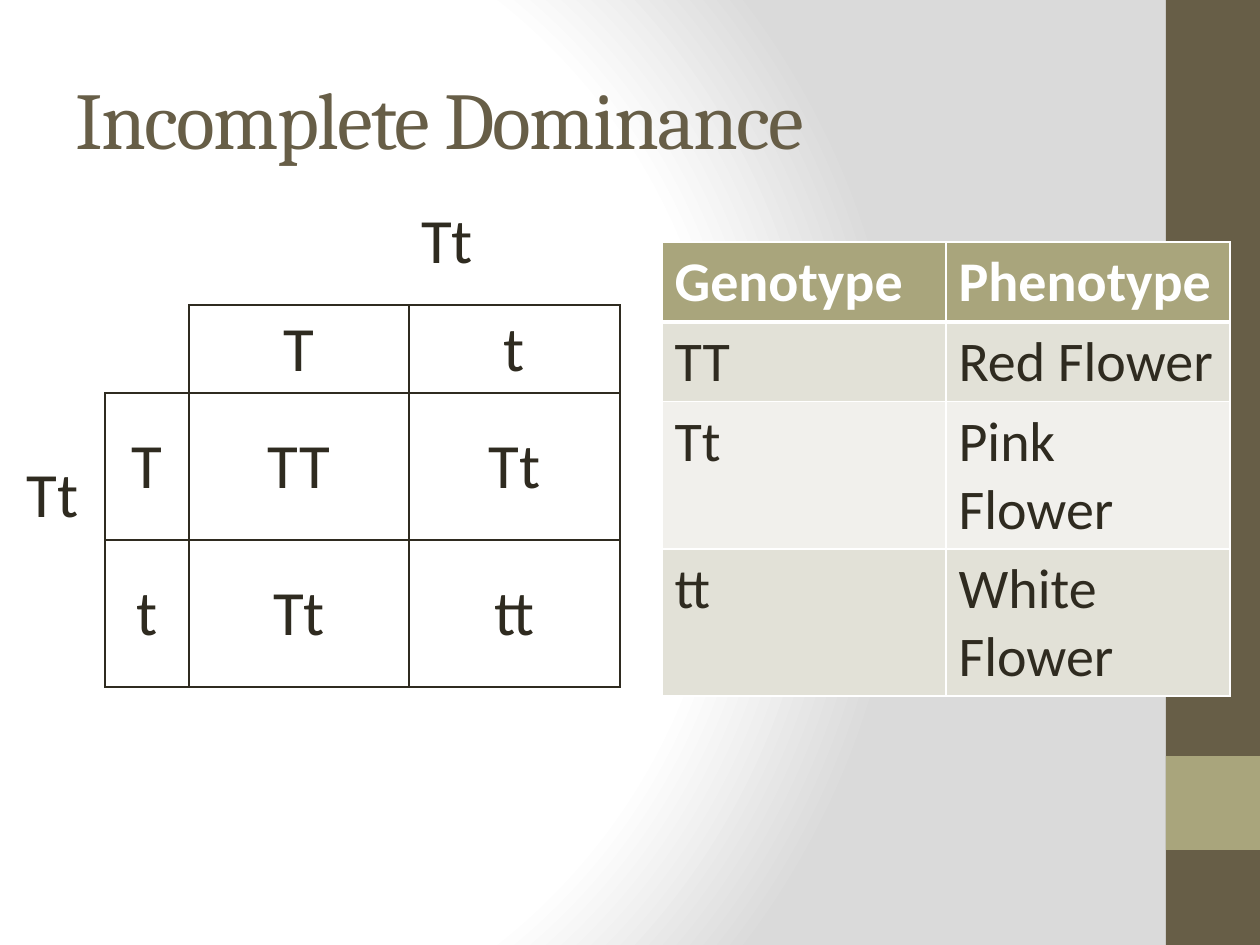
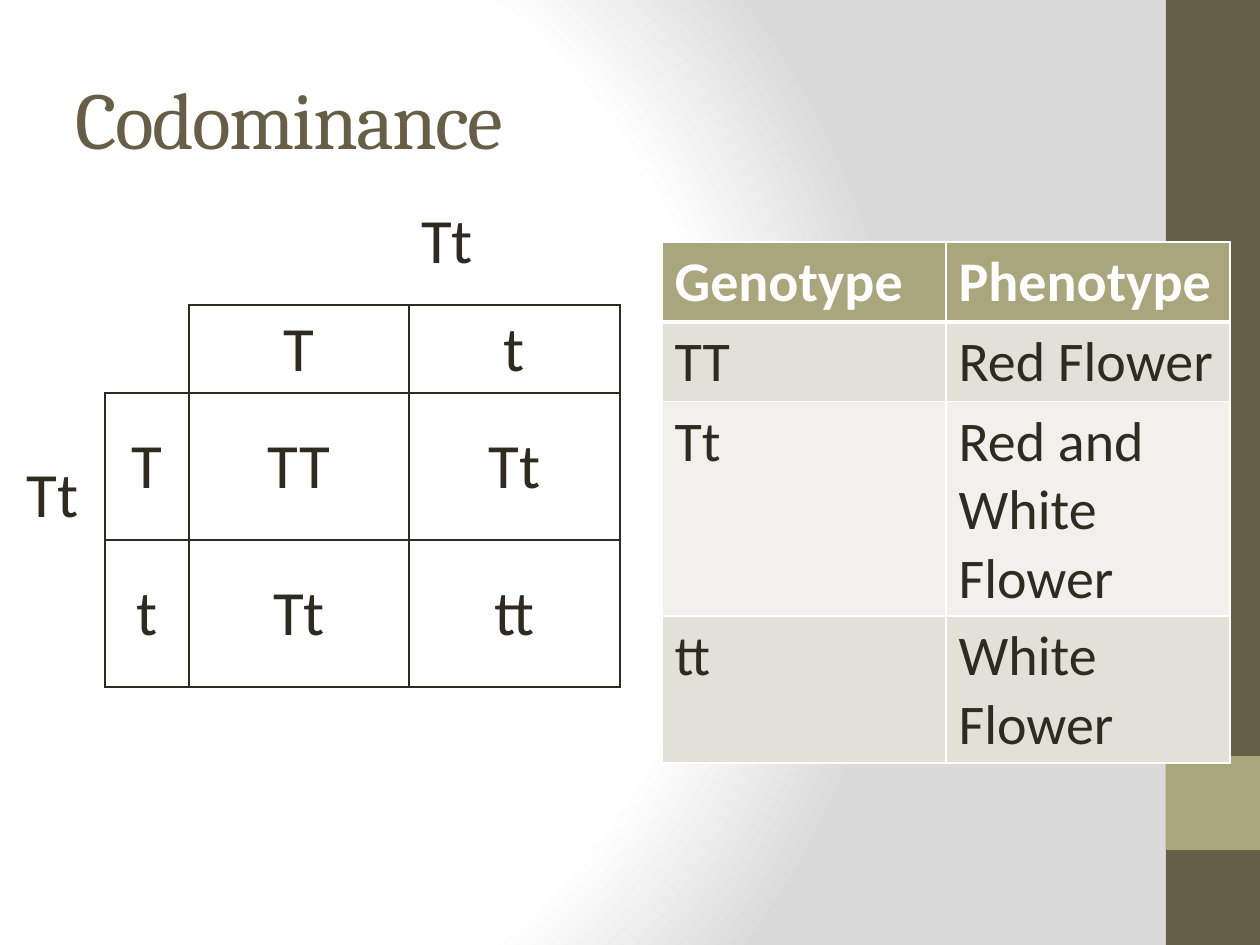
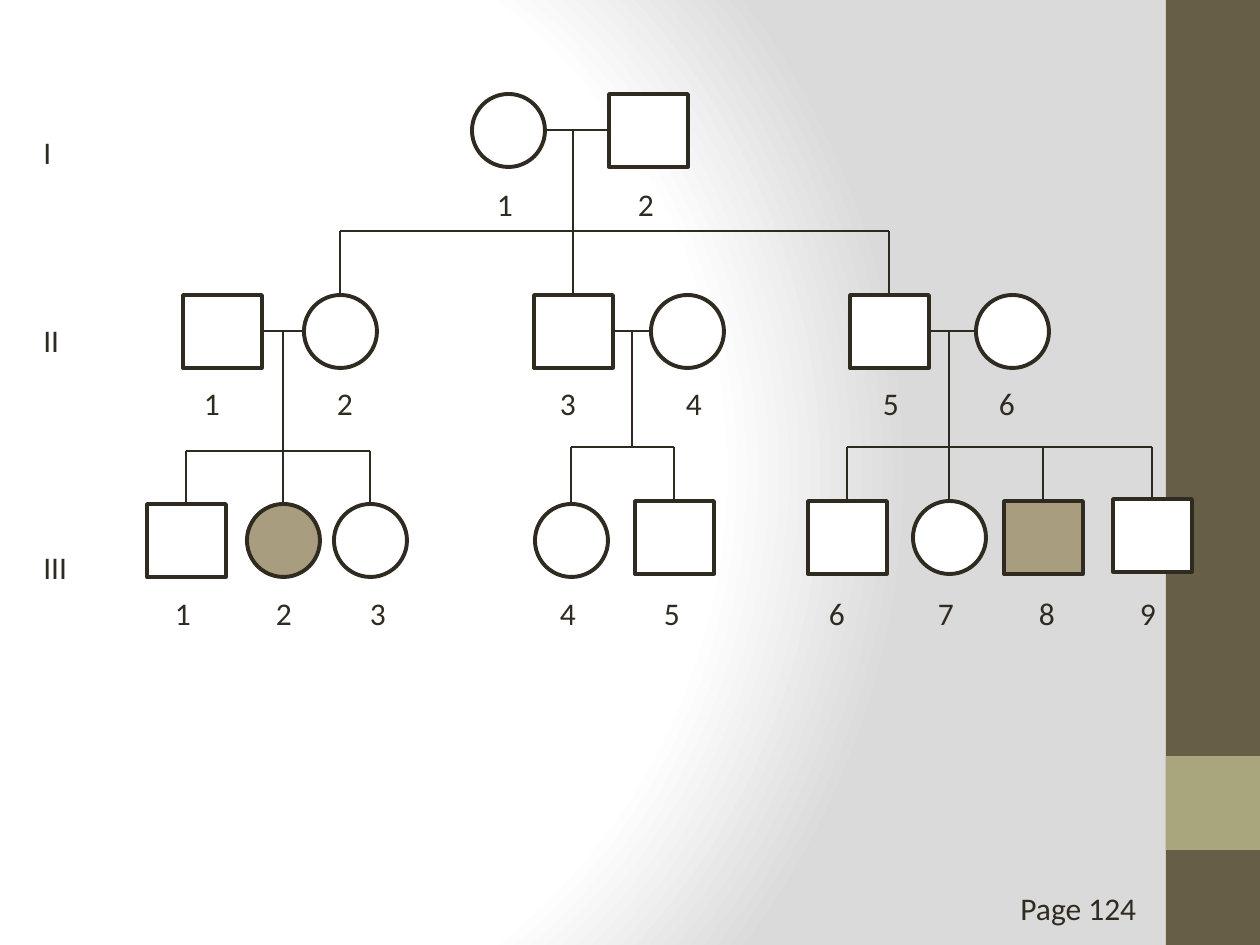
from collections import namedtuple

from pptx import Presentation
from pptx import oxml
from pptx import util as u
from pptx.dml.color import RGBColor
from pptx.enum import shapes, text
from pptx.oxml import ns

Box = namedtuple("Box", "left top width height")
Person = namedtuple("Person", "kind left top label affected", defaults=(False,))
Family = namedtuple("Family", "parents bar children")

WHITE = RGBColor(0xFF, 0xFF, 0xFF)
SILVER = RGBColor(0xDA, 0xDA, 0xDA)
BROWN = RGBColor(0x67, 0x5E, 0x47)
OLIVE = RGBColor(0xA9, 0xA5, 0x7C)
TAN = RGBColor(0xA8, 0x9D, 0x7F)
INK = RGBColor(0x2F, 0x2B, 0x20)
LINE = RGBColor(0x2E, 0x2A, 0x1F)
STRIPES = (RGBColor(0xE2, 0xE1, 0xD7), RGBColor(0xF1, 0xF0, 0xEC))

TITLE = {"name": "Cambria", "size": u.Pt(46)}
PUNNETT = {"name": "Calibri", "size": u.Pt(36)}
TRAIT = {"name": "Calibri", "size": u.Pt(32), "bold": False}
TRAIT_HEAD = {**TRAIT, "bold": True}
LABEL = {"name": "Calibri", "size": u.Pt(18)}

PLAIN_TABLE = "{2D5ABB26-0587-4C30-8999-92F81FD0307C}"
TITLE_BOX = Box(63, 38, 1050, 158)
SQUARE_BOX = Box(0, 179, 620, 493)
TRAIT_BOX = Box(662, 242, 568, 208)
PEDIGREE_BOX = Box(140, 90, 1080, 560)
NUMERAL_BOX = Box(31, 127, 63, 471)
PAGE_BOX = Box(1008, 883, 179, 53)

SIZES = {"circle": (73, 73), "square": (79, 73)}
PRESETS = {"circle": shapes.MSO_SHAPE.OVAL, "square": shapes.MSO_SHAPE.RECTANGLE}
WEIGHTS = {"circle": 2.25, "square": 2}
GENERATIONS = (
    (Person("circle", 332, 4, 365), Person("square", 469, 4, 506)),
    (
        Person("square", 43, 205, 72),
        Person("circle", 164, 205, 205),
        Person("square", 394, 205, 428),
        Person("circle", 511, 205, 554),
        Person("square", 710, 205, 751),
        Person("circle", 836, 205, 867),
    ),
    (
        Person("square", 7, 414, 43),
        Person("circle", 107, 414, 144, True),
        Person("circle", 194, 414, 238),
        Person("circle", 395, 414, 428),
        Person("square", 495, 411, 532),
        Person("square", 668, 411, 697),
        Person("circle", 773, 411, 806),
        Person("square", 864, 411, 907, True),
        Person("square", 973, 409, 1008),
    ),
)
LABEL_ROWS = ((89, 212), (288, 942), (498, 1077))
FIRST, SECOND, THIRD = GENERATIONS
FAMILIES = (
    Family(FIRST, 141, (SECOND[1], SECOND[2], SECOND[4])),
    Family(SECOND[:2], 361, THIRD[:3]),
    Family(SECOND[2:4], 357, THIRD[3:5]),
    Family(SECOND[4:], 357, THIRD[5:]),
)


def px(length):
    return u.Emu(round(length * 914400 / 126))


def place(box):
    return [px(length) for length in box]


def style(target, values):
    for name, value in values.items():
        setattr(target, name, value)


def drawing(tag, attributes="", content=""):
    return oxml.parse_xml(f"<a:{tag} {ns.nsdecls('a')} {attributes}>{content}</a:{tag}>")


def solid(color):
    return f'<a:solidFill><a:srgbClr val="{color}"/></a:solidFill>'


def write(para, words, font, color=INK):
    span = para.add_run()
    span.text = words
    style(span.font, font)
    span.font.color.rgb = color
    return span


def add_text(page, box, words, font, color=INK, **frame_values):
    frame = page.shapes.add_textbox(*place(box)).text_frame
    style(frame, {"word_wrap": True, **frame_values})
    return frame, write(frame.paragraphs[0], words, font, color)


def add_figure(page, preset, box, fill, weight=None):
    shape = page.shapes.add_shape(preset, *place(box))
    shape.shadow.inherit = False
    shape.fill.solid()
    shape.fill.fore_color.rgb = fill
    if weight:
        shape.line.color.rgb = INK
        shape.line.width = u.Pt(weight)
    else:
        shape.line.fill.background()


def add_line(page, start, end):
    line = page.shapes.add_connector(
        shapes.MSO_CONNECTOR.STRAIGHT, *map(px, (*start, *end)))
    line.line.color.rgb = LINE
    line.line.width = u.Pt(1)
    line.element.spPr.append(drawing("effectLst"))


def add_grid(page, box, columns, rows):
    table = page.shapes.add_table(len(rows), len(columns), *place(box)).table
    table._tbl.tblPr.find(ns.qn("a:tableStyleId")).text = PLAIN_TABLE
    for column, width in zip(table.columns, columns):
        column.width = px(width)
    for row, height in zip(table.rows, rows):
        row.height = px(height)
    return table


def set_borders(cell, color, **weights):
    properties = cell._tc.get_or_add_tcPr()
    for index, side in enumerate("LRTB"):
        width = u.Pt(weights.get(side, 1))
        properties.insert(index, drawing(f"ln{side}", f'w="{width}"', solid(color)))


def set_background(master):
    master.background.fill.gradient()
    gradient = master.element.find(".//" + ns.qn("a:gradFill"))
    stops = "".join(
        f'<a:gs pos="{position}"><a:srgbClr val="{color}"/></a:gs>'
        for position, color in ((0, WHITE), (75000, WHITE), (100000, SILVER)))
    circle = ('<a:path path="circle"><a:fillToRect l="20000" t="50000" '
              'r="100000" b="50000"/></a:path>')
    radial = drawing("gradFill", 'rotWithShape="1"', f"<a:gsLst>{stops}</a:gsLst>{circle}")
    gradient.getparent().replace(gradient, radial)


def add_page(deck):
    page = deck.slides.add_slide(deck.slide_layouts[6])
    for box, color in ((Box(1166, 0, 94, 945), BROWN), (Box(1166, 756, 94, 94), OLIVE)):
        add_figure(page, shapes.MSO_SHAPE.RECTANGLE, box, color)
    return page


def add_title(page, words):
    _, span = add_text(page, TITLE_BOX, words, TITLE, BROWN,
                       vertical_anchor=text.MSO_ANCHOR.MIDDLE)
    span.font._element.set("spc", "-100")


def add_punnett_square(page, box):
    table = add_grid(page, box, (105, 84, 220, 211), (126, 73, 147, 147))
    table.cell(0, 1).merge(table.cell(0, 3))
    table.cell(1, 0).merge(table.cell(3, 0))
    table.cell(0, 1).margin_left = px(182)
    rows = (("", "Tt", "", ""), ("Tt", "", "T", "t"),
            ("", "T", "TT", "Tt"), ("", "t", "Tt", "tt"))
    for r, row in enumerate(rows):
        for c, words in enumerate(row):
            cell = table.cell(r, c)
            cell.fill.background()
            if words:
                cell.vertical_anchor = text.MSO_ANCHOR.MIDDLE
                para = cell.text_frame.paragraphs[0]
                para.alignment = text.PP_ALIGN.CENTER
                write(para, words, PUNNETT)
            if words and r and c:
                set_borders(cell, INK)


def add_trait_table(page, box, mixed):
    rows = (("Genotype", "Phenotype"), ("TT", "Red Flower"),
            ("Tt", mixed), ("tt", "White Flower"))
    table = add_grid(page, box, [box.width // 2] * 2, [box.height // 4] * 4)
    for r, row in enumerate(rows):
        for c, words in enumerate(row):
            cell = table.cell(r, c)
            cell.fill.solid()
            cell.fill.fore_color.rgb = STRIPES[(r - 1) % 2] if r else OLIVE
            write(cell.text_frame.paragraphs[0], words,
                  TRAIT if r else TRAIT_HEAD, INK if r else WHITE)
            set_borders(cell, WHITE, B=1 if r else 3, T=3 if r == 1 else 1)


def add_cross_page(deck, title, mixed):
    page = add_page(deck)
    add_title(page, title)
    add_punnett_square(page, SQUARE_BOX)
    add_trait_table(page, TRAIT_BOX, mixed)


def add_numerals(page, box):
    frame, _ = add_text(page, box, "I", LABEL)
    for words, gap in (("II", 86), ("III", 108)):
        para = frame.add_paragraph()
        para.space_before = u.Pt(gap)
        write(para, words, LABEL)


def add_labels(page, box, people, top, width):
    first = people[0].label
    label_box = Box(box.left + first - 42, box.top + top, width, 50)
    words = "\t".join(str(number) for number in range(1, len(people) + 1))
    frame, _ = add_text(page, label_box, words, LABEL, margin_left=px(34))
    stops = "".join(f'<a:tab pos="{px(person.label - first)}" algn="l"/>'
                    for person in people[1:])
    properties = frame.paragraphs[0]._p.get_or_add_pPr()
    properties.append(drawing("tabLst", content=stops))


def center(person):
    return person.left + SIZES[person.kind][0] // 2


def add_family(page, box, family):
    def connect(x1, y1, x2, y2):
        add_line(page, (box.left + x1, box.top + y1), (box.left + x2, box.top + y2))

    left, right = family.parents
    edge = left.left + SIZES[left.kind][0]
    middle = left.top + SIZES[left.kind][1] // 2
    drop, bottom = (edge + right.left) // 2, family.bar
    connect(edge, middle, right.left, middle)
    connect(center(family.children[0]), family.bar, center(family.children[-1]), family.bar)
    for child in family.children:
        if abs(center(child) - drop) < 5:
            drop, bottom = center(child), child.top
        else:
            connect(center(child), family.bar, center(child), child.top)
    connect(drop, middle, drop, bottom)


def add_pedigree(page, box):
    for people, (top, width) in zip(GENERATIONS, LABEL_ROWS):
        for person in people:
            outline = Box(box.left + person.left, box.top + person.top, *SIZES[person.kind])
            add_figure(page, PRESETS[person.kind], outline,
                       TAN if person.affected else WHITE, WEIGHTS[person.kind])
        add_labels(page, box, people, top, width)
    for family in FAMILIES:
        add_family(page, box, family)


def add_pedigree_page(deck):
    page = add_page(deck)
    add_numerals(page, NUMERAL_BOX)
    add_pedigree(page, PEDIGREE_BOX)
    add_text(page, PAGE_BOX, "Page 124", LABEL)


def main():
    deck = Presentation()
    style(deck, {"slide_width": px(1260), "slide_height": px(945)})
    set_background(deck.slide_master)
    add_cross_page(deck, "Incomplete Dominance", "Pink Flower")
    add_cross_page(deck, "Codominance", "Red and White Flower")
    add_pedigree_page(deck)
    deck.save("out.pptx")


if __name__ == "__main__":
    main()
